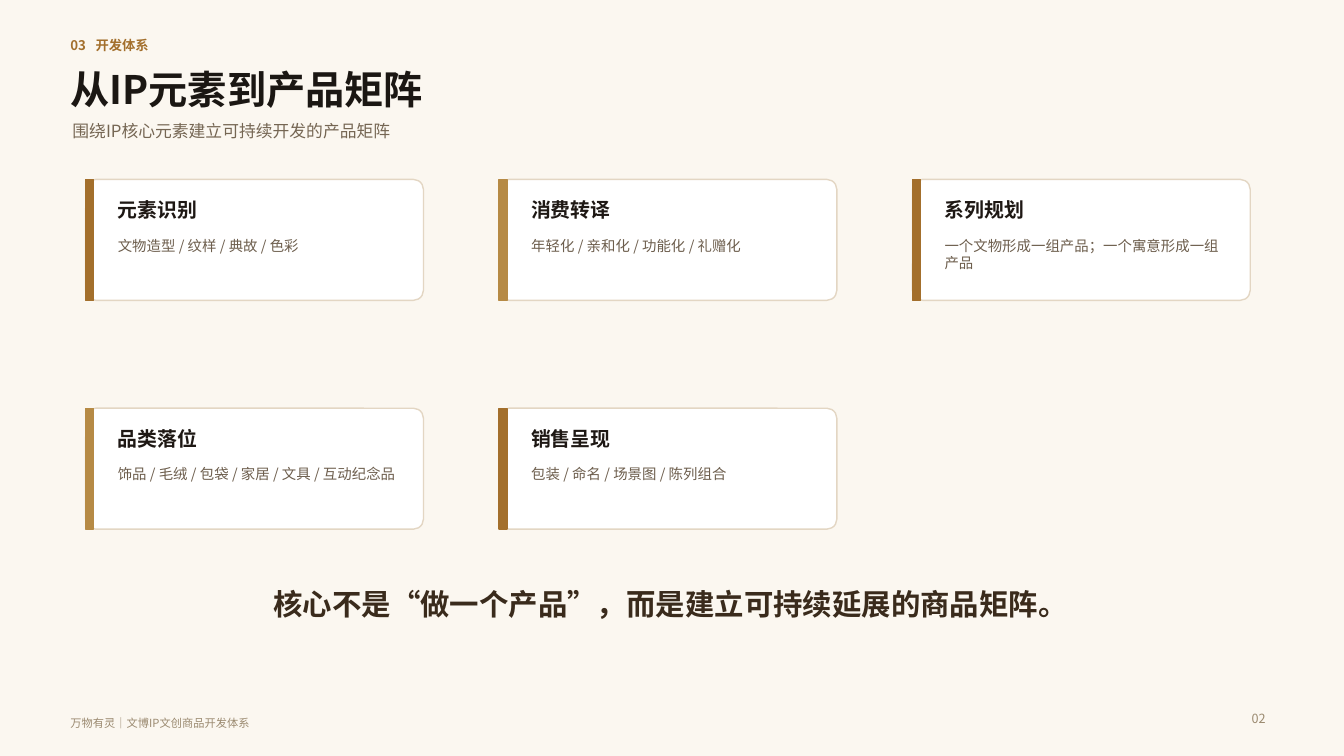
from dataclasses import dataclass

from lxml import etree
from pptx import Presentation
from pptx.dml.color import RGBColor
from pptx.enum.shapes import MSO_SHAPE
from pptx.enum.text import MSO_ANCHOR, MSO_AUTO_SIZE, PP_ALIGN
from pptx.oxml.ns import qn
from pptx.util import Emu, Pt

ROUNDED, RECTANGLE = MSO_SHAPE.ROUNDED_RECTANGLE, MSO_SHAPE.RECTANGLE
TOP, MIDDLE = MSO_ANCHOR.TOP, MSO_ANCHOR.MIDDLE
LEFT, CENTER, RIGHT = PP_ALIGN.LEFT, PP_ALIGN.CENTER, PP_ALIGN.RIGHT
NO_AUTOFIT = MSO_AUTO_SIZE.NONE

# Content
SECTION = "03\t开发体系"
TITLE = "从IP元素到产品矩阵"
SUBTITLE = "围绕IP核心元素建立可持续开发的产品矩阵"
CARDS = [
    ("元素识别", "文物造型 / 纹样 / 典故 / 色彩"),
    ("消费转译", "年轻化 / 亲和化 / 功能化 / 礼赠化"),
    ("系列规划", "一个文物形成一组产品；一个寓意形成一组产品"),
    ("品类落位", "饰品 / 毛绒 / 包袋 / 家居 / 文具 / 互动纪念品"),
    ("销售呈现", "包装 / 命名 / 场景图 / 陈列组合"),
]
CONCLUSION = "核心不是“做一个产品”，而是建立可持续延展的商品矩阵。"
FOOTER = "万物有灵｜文博IP文创商品开发体系"
PAGE_NUMBER = "02"


@dataclass(frozen=True)
class Style:
    size: float
    color: str
    bold: bool = False


@dataclass(frozen=True)
class Theme:
    font: str = "Noto Sans CJK SC"
    background: str = "FBF7F0"
    card_fill: str = "FFFFFF"
    card_line: str = "E3D6C3"
    accents: tuple = ("A36F2C", "B68A45")
    section: Style = Style(9.5, "A36F2C", True)
    title: Style = Style(28, "1B1713", True)
    subtitle: Style = Style(12, "756653")
    card_title: Style = Style(14.2, "1E1814", True)
    card_body: Style = Style(10.3, "6D5E4D")
    conclusion: Style = Style(21, "3A2B1C", True)
    footer: Style = Style(8, "9B8A70")
    page_number: Style = Style(9, "9B8A70")


THEME = Theme()

# Layout, 100 px to the inch
PX = 9144
SLIDE_WIDTH, SLIDE_HEIGHT = 1333, 750
GRID_LEFT, GRID_TOP, COLUMNS = 85, 178, 3
COLUMN_STEP, ROW_STEP = 410, 227
CARD_WIDTH, CARD_HEIGHT, CARD_RADIUS = 335, 120, 10
ACCENT_WIDTH, TEXT_INDENT = 8, 22
SECTION_TAB = 25


def px(value):
    return Emu(value * PX)


def style_text(shape, text, style, align=LEFT, anchor=MIDDLE):
    frame = shape.text_frame
    frame.text = text
    frame.word_wrap = True
    frame.auto_size = NO_AUTOFIT
    frame.vertical_anchor = anchor
    paragraph = frame.paragraphs[0]
    paragraph.alignment = align
    for run in paragraph.runs:
        font = run.font
        font.name = THEME.font
        font.size = Pt(style.size)
        font.bold = style.bold
        font.color.rgb = RGBColor.from_string(style.color)
        east_asian = etree.SubElement(run._r.get_or_add_rPr(), qn("a:ea"))
        east_asian.set("typeface", THEME.font)
    return paragraph


def add_text(slide, box, text, style, align=LEFT, anchor=MIDDLE):
    shape = slide.shapes.add_textbox(*map(px, box))
    return style_text(shape, text, style, align, anchor)


def add_panel(slide, kind, box, fill, line):
    shape = slide.shapes.add_shape(kind, *map(px, box))
    shape.shadow.inherit = False
    shape.fill.solid()
    shape.fill.fore_color.rgb = RGBColor.from_string(fill)
    shape.line.color.rgb = RGBColor.from_string(line)
    shape.line.width = Pt(1)
    return shape


def add_card(slide, index, heading, body):
    row, column = divmod(index, COLUMNS)
    left = GRID_LEFT + column * COLUMN_STEP
    top = GRID_TOP + row * ROW_STEP
    accent = THEME.accents[index % len(THEME.accents)]
    panel = add_panel(slide, ROUNDED, (left, top, CARD_WIDTH, CARD_HEIGHT),
                      THEME.card_fill, THEME.card_line)
    panel.adjustments[0] = CARD_RADIUS / CARD_HEIGHT
    add_panel(slide, RECTANGLE, (left, top, ACCENT_WIDTH, CARD_HEIGHT), accent, accent)
    text_left = left + TEXT_INDENT
    add_text(slide, (text_left, top + 16, 300, 28), heading, THEME.card_title)
    add_text(slide, (text_left, top + 52, 297, 60), body, THEME.card_body, anchor=TOP)


def main():
    presentation = Presentation()
    presentation.slide_width = px(SLIDE_WIDTH)
    presentation.slide_height = px(SLIDE_HEIGHT)
    slide = presentation.slides.add_slide(presentation.slide_layouts.get_by_name("Title Only"))
    slide.background.fill.solid()
    slide.background.fill.fore_color.rgb = RGBColor.from_string(THEME.background)

    # Heading
    section = add_text(slide, (60, 33, 320, 23), SECTION, THEME.section)
    tab_list = etree.SubElement(section._p.get_or_add_pPr(), qn("a:tabLst"))
    etree.SubElement(tab_list, qn("a:tab"), pos=str(px(SECTION_TAB)), algn="l")
    title = slide.shapes.title
    title.left, title.top, title.width, title.height = map(px, (60, 63, 890, 50))
    style_text(title, TITLE, THEME.title)
    add_text(slide, (62, 114, 920, 32), SUBTITLE, THEME.subtitle)

    # Cards
    for index, (heading, body) in enumerate(CARDS):
        add_card(slide, index, heading, body)

    # Conclusion and footer
    add_text(slide, (185, 582, 960, 34), CONCLUSION, THEME.conclusion, CENTER)
    add_text(slide, (60, 708, 460, 18), FOOTER, THEME.footer)
    add_text(slide, (1210, 702, 55, 22), PAGE_NUMBER, THEME.page_number, RIGHT)

    presentation.save("out.pptx")


if __name__ == "__main__":
    main()
